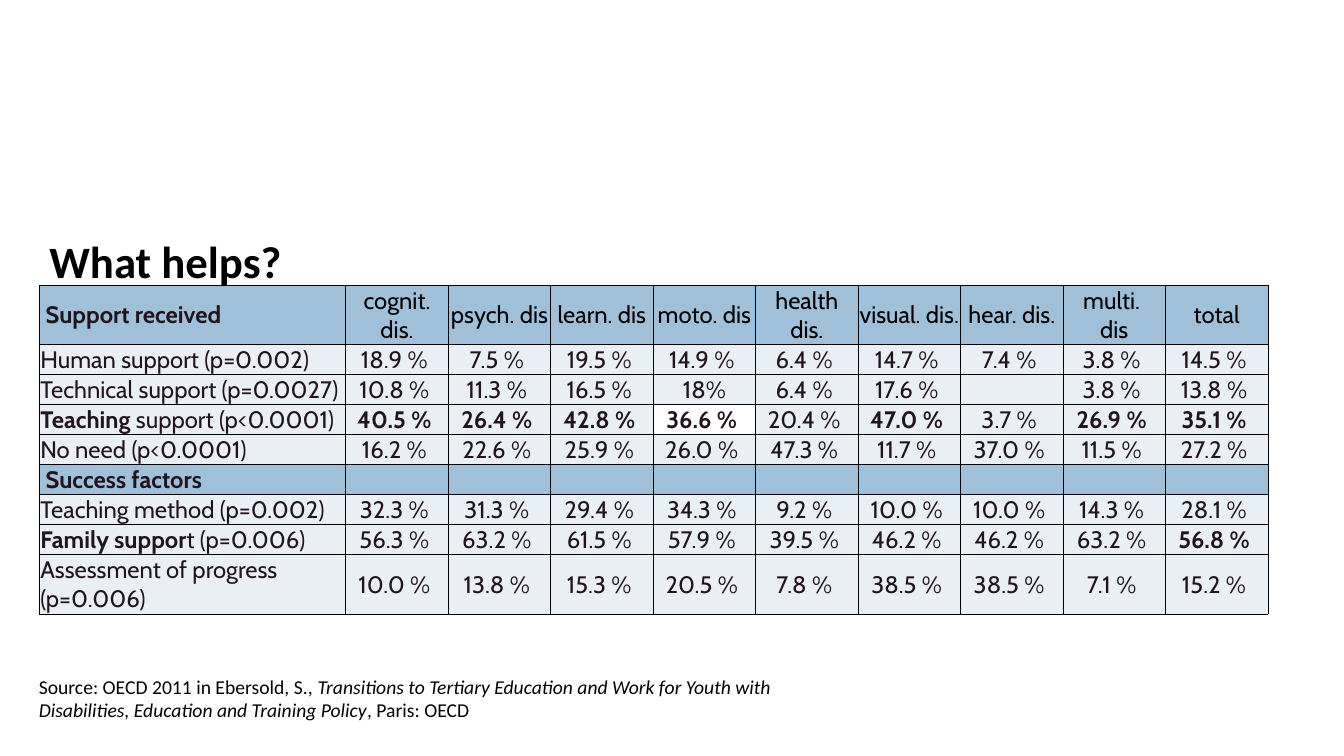
from lxml.etree import SubElement
from pptx import Presentation
from pptx.dml.color import RGBColor
from pptx.enum.text import MSO_ANCHOR, MSO_AUTO_SIZE, PP_ALIGN
from pptx.oxml.ns import qn
from pptx.util import Pt

BAND, BODY, INK, BLACK = "A0BFD8", "EAEFF4", "21141E", "000000"
TABLE_SIZE = 17
LABEL_WIDTH, VALUE_WIDTH = 218.9, 73.2
HEADER_HEIGHT, ROW_HEIGHT, LAST_HEIGHT = 42.1, 21.4, 41.8

# Text between asterisks is bold.
HEADINGS = ["* Support received*", "cognit. dis.", "psych. dis", "learn. dis", "moto. dis",
            "health dis.", "visual. dis.", "hear. dis.", "multi. \ndis", "total"]
ROWS = [
    ("Human support (p=0.002)", "18.9 7.5 19.5 14.9 6.4 14.7 7.4 3.8 14.5"),
    ("Technical support (p=0.0027)", "10.8 11.3 16.5 18% 6.4 17.6 - 3.8 13.8"),
    ("*Teaching *support (p<0.0001)",
     "*40.5 *26.4 *42.8 *36.6 20.4 *47.0 3.7 *26.9 *35.1"),
    ("No need (p<0.0001)", "16.2 22.6 25.9 26.0 47.3 11.7 37.0 11.5 27.2"),
    ("* Success factors*", "- - - - - - - - -"),
    ("Teaching method (p=0.002)", "32.3 31.3 29.4 34.3 9.2 10.0 10.0 14.3 28.1"),
    ("*Family suppor*t (p=0.006)", "56.3 63.2 61.5 57.9 39.5 46.2 46.2 63.2 *56.8"),
    ("Assessment of progress (p=0.006)", "10.0 13.8 15.3 20.5 7.8 38.5 38.5 7.1 15.2"),
]
SECTION_ROWS = (0, 5)
UNFILLED = (3, 4)


def rgb(hex_colour):
    return RGBColor.from_string(hex_colour)


def add_run(paragraph, text, face, size, colour, **formats):
    run = paragraph.add_run()
    run.text = text
    run.font.color.rgb = rgb(colour)
    for name, value in {"name": face, "size": Pt(size), **formats}.items():
        setattr(run.font, name, value)


def percent(figure):
    """Turn a figure from ROWS into the text of its cell."""
    if figure == "-":
        return ""
    return figure if figure.endswith("%") else f"{figure} % "


def draw_borders(cell):
    properties = cell._tc.get_or_add_tcPr()
    for position, side in enumerate(("lnL", "lnR", "lnT", "lnB")):
        line = SubElement(properties, qn(f"a:{side}"), w=str(Pt(0.5)))
        properties.insert(position, line)
        fill = SubElement(line, qn("a:solidFill"))
        SubElement(fill, qn("a:srgbClr"), val=BLACK)


def fill_cell(cell, text, fill, colour, align):
    margins = {"margin_left": Pt(0.7), "margin_top": Pt(0.7),
               "margin_right": Pt(0.7), "margin_bottom": Pt(0)}
    for name, value in {**margins, "vertical_anchor": MSO_ANCHOR.MIDDLE}.items():
        setattr(cell, name, value)
    if fill:
        cell.fill.solid()
        cell.fill.fore_color.rgb = rgb(fill)
    else:
        cell.fill.background()
    draw_borders(cell)
    for index, line in enumerate(text.split("\n")):
        frame = cell.text_frame
        paragraph = frame.add_paragraph() if index else frame.paragraphs[0]
        paragraph.alignment = align
        for part, words in enumerate(line.split("*")):
            if words:
                add_run(paragraph, words, "Cabin", TABLE_SIZE, colour, bold=part % 2 == 1)
        if not line:
            SubElement(paragraph._p, qn("a:endParaRPr"), sz=str(TABLE_SIZE * 100))


def add_support_table(slide, left, top):
    lines = [HEADINGS] + [[label, *map(percent, figures.split())] for label, figures in ROWS]
    widths = [LABEL_WIDTH] + [VALUE_WIDTH] * (len(HEADINGS) - 1)
    heights = [HEADER_HEIGHT] + [ROW_HEIGHT] * (len(ROWS) - 1) + [LAST_HEIGHT]
    table = slide.shapes.add_table(len(lines), len(widths), Pt(left), Pt(top),
                                   Pt(sum(widths)), Pt(sum(heights))).table
    table.first_row = table.horz_banding = False
    for column, width in zip(table.columns, widths):
        column.width = Pt(width)
    for row, height in zip(table.rows, heights):
        row.height = Pt(height)
    for r, line in enumerate(lines):
        for c, text in enumerate(line):
            fill = BAND if r in SECTION_ROWS else BODY
            fill_cell(table.cell(r, c), text,
                      None if (r, c) == UNFILLED else fill,
                      BLACK if r == 0 and c else INK,
                      PP_ALIGN.CENTER if c else PP_ALIGN.LEFT)


def place(shape, left, top, width, height):
    box = {"left": left, "top": top, "width": width, "height": height}
    for name, value in box.items():
        setattr(shape, name, Pt(value))
    frame = shape.text_frame
    frame.word_wrap = True
    frame.auto_size = MSO_AUTO_SIZE.SHAPE_TO_FIT_TEXT
    frame.vertical_anchor = MSO_ANCHOR.TOP
    paragraph = frame.paragraphs[0]
    paragraph.alignment = PP_ALIGN.LEFT
    return paragraph


def add_title(slide, *box):
    """Fill the title placeholder and bring it in front of the table."""
    title = slide.shapes.title
    add_run(place(title, *box), "What helps?", "Calibri", 32, BLACK, bold=True)
    title._element.getparent().append(title._element)


def add_source(slide, *box):
    source = slide.shapes.add_textbox(0, 0, 0, 0)
    paragraph = place(source, *box)
    for text, italic in (
        ("Source: OECD 2011 in Ebersold, S., ", False),
        ("Transitions to Tertiary Education and Work for Youth with Disabilities, "
         "Education and Training Policy", True),
        (", Paris: OECD", False),
    ):
        add_run(paragraph, text, "Calibri", 14, BLACK, italic=italic)


def main():
    deck = Presentation()
    deck.slide_width, deck.slide_height = Pt(960), Pt(540)
    slide = deck.slides.add_slide(deck.slide_layouts[5])
    add_support_table(slide, 28.1, 203.8)
    add_source(slide, 20.6, 478.3, 602, 41.2)
    add_title(slide, 28.1, 163.4, 241.2, 46.1)
    deck.save("out.pptx")


if __name__ == "__main__":
    main()
